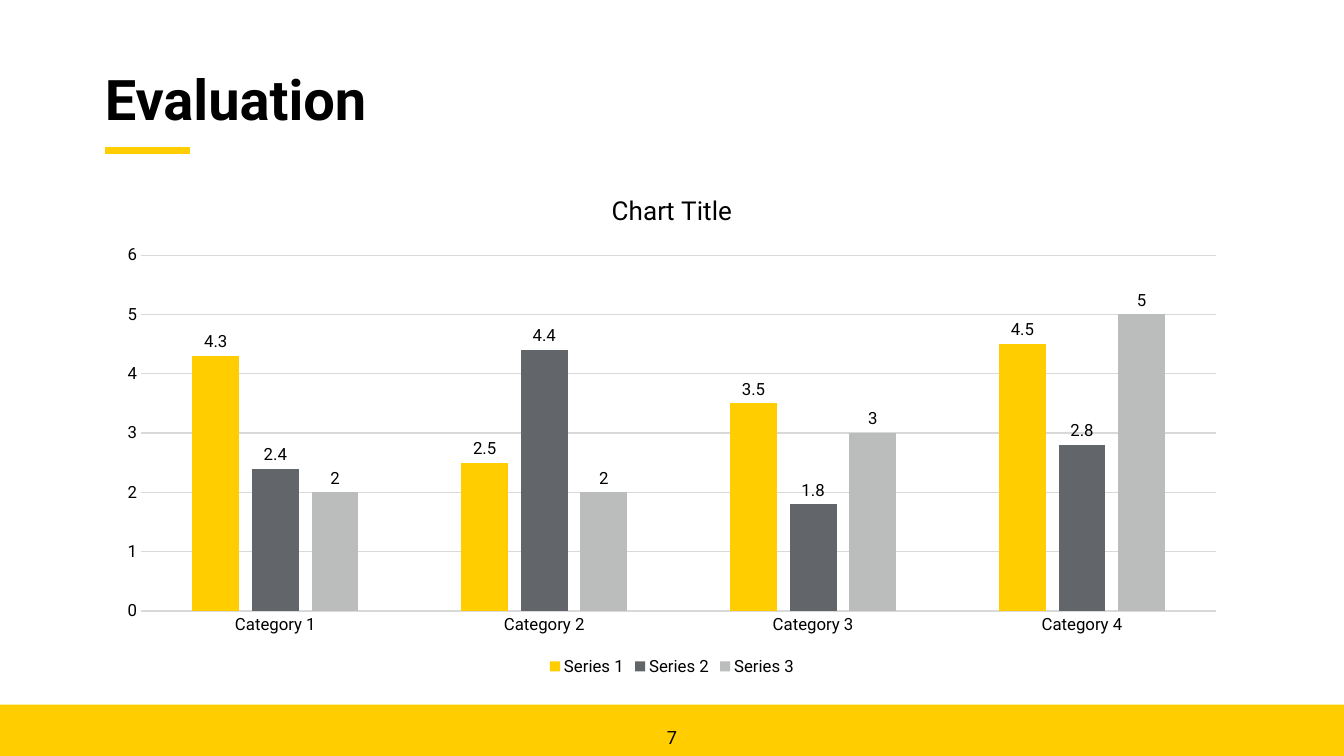
from lxml import etree
from pptx import Presentation
from pptx import util as u
from pptx.chart.data import CategoryChartData
from pptx.dml.color import RGBColor
from pptx.enum import chart as ch, shapes, text

YELLOW, BLACK, RULE = "FFCD00", "000000", "D9D9D9"
CATEGORIES = ["Category 1", "Category 2", "Category 3", "Category 4"]
SERIES = [
    ("Series 1", YELLOW, (4.3, 2.5, 3.5, 4.5)),
    ("Series 2", "62666A", (2.4, 4.4, 1.8, 2.8)),
    ("Series 3", "BBBCBC", (2, 2, 3, 5)),
]


def paint(color_format, color):
    color_format.rgb = RGBColor.from_string(color)


def style_font(font, size, bold=False):
    font.name = "Roboto"
    font.size = u.Pt(size)
    font.bold = bold
    paint(font.color, BLACK)


def style_line(line, color, width):
    line.fill.solid()
    paint(line.fill.fore_color, color)
    line.width = u.Pt(width)


def write(shape, words, size, align, anchor, bold=False):
    frame = shape.text_frame
    frame.word_wrap = True
    frame.auto_size = text.MSO_AUTO_SIZE.NONE
    frame.margin_left = frame.margin_right = 0
    frame.margin_top = frame.margin_bottom = 0
    frame.vertical_anchor = anchor
    paragraph = frame.paragraphs[0]
    paragraph.alignment = align
    run = paragraph.add_run()
    run.text = words
    style_font(run.font, size, bold)
    return paragraph


def add_heading(slide, words, left, top, width, height):
    heading = slide.shapes.title
    heading.left, heading.top = u.Inches(left), u.Inches(top)
    heading.width, heading.height = u.Inches(width), u.Inches(height)
    paragraph = write(heading, words, 40, text.PP_ALIGN.LEFT,
                      text.MSO_ANCHOR.MIDDLE, bold=True)
    paragraph.line_spacing = 0.9
    bottom = u.Inches(top + height)
    accent = slide.shapes.add_connector(
        shapes.MSO_CONNECTOR.STRAIGHT,
        u.Inches(left), bottom, u.Inches(left + 0.84), bottom)
    style_line(accent.line, YELLOW, 5)
    properties = accent.line._get_or_add_ln().getparent()
    etree.SubElement(
        properties,
        "{http://schemas.openxmlformats.org/drawingml/2006/main}effectLst")


def add_footer(slide, number, left, top, width, height):
    band = slide.shapes.add_shape(
        shapes.MSO_SHAPE.RECTANGLE, u.Inches(left), u.Inches(top),
        u.Inches(width), u.Inches(height))
    band.shadow.inherit = False
    band.fill.solid()
    paint(band.fill.fore_color, YELLOW)
    band.line.fill.background()
    page = slide.shapes.add_textbox(
        u.Inches(left + (width - 0.65) / 2), u.Inches(top + 0.17),
        u.Inches(0.65), u.Inches(0.26))
    write(page, number, 13, text.PP_ALIGN.CENTER, text.MSO_ANCHOR.BOTTOM)


def style_axes(chart):
    for axis in (chart.category_axis, chart.value_axis):
        axis.major_tick_mark = axis.minor_tick_mark = ch.XL_TICK_MARK.NONE
        style_font(axis.tick_labels.font, 12)
    style_line(chart.category_axis.format.line, RULE, 0.75)
    values = chart.value_axis
    values.format.line.fill.background()
    values.minimum_scale, values.maximum_scale, values.major_unit = 0, 6, 1
    values.has_major_gridlines = True
    style_line(values.major_gridlines.format.line, RULE, 0.75)


def add_evaluation_chart(slide, left, top, width, height):
    scores = CategoryChartData()
    scores.categories = CATEGORIES
    for name, _, values in SERIES:
        scores.add_series(name, values)
    chart = slide.shapes.add_chart(
        ch.XL_CHART_TYPE.COLUMN_CLUSTERED, u.Inches(left), u.Inches(top),
        u.Inches(width), u.Inches(height), scores).chart
    style_font(chart.font, 10)
    chart.has_title = True
    caption = chart.chart_title.text_frame.paragraphs[0].add_run()
    caption.text = "Chart Title"
    style_font(caption.font, 18.6)
    chart.chart_title.include_in_layout = False
    chart.has_legend = True
    chart.legend.position = ch.XL_LEGEND_POSITION.BOTTOM
    chart.legend.include_in_layout = False
    style_font(chart.legend.font, 12)
    style_axes(chart)

    plot = chart.plots[0]
    plot.gap_width, plot.overlap = 219, -27
    plot.vary_by_categories = False
    for series, (_, color, _) in zip(plot.series, SERIES):
        series.format.fill.solid()
        paint(series.format.fill.fore_color, color)
        series.invert_if_negative = False
        labels = series.data_labels
        labels.show_value = True
        labels.position = ch.XL_LABEL_POSITION.OUTSIDE_END
        style_font(labels.font, 12)


def main():
    deck = Presentation()
    deck.slide_width, deck.slide_height = u.Inches(13.33), u.Inches(7.5)
    slide = deck.slides.add_slide(deck.slide_layouts[5])
    slide.background.fill.solid()
    paint(slide.background.fill.fore_color, "FFFFFF")
    add_footer(slide, "7", 0, 6.99, 13.33, 0.51)
    add_heading(slide, "Evaluation", 1.04, 0.54, 11.25, 0.95)
    add_evaluation_chart(slide, 1.04, 1.72, 11.25, 5.03)
    deck.save("out.pptx")


if __name__ == "__main__":
    main()
